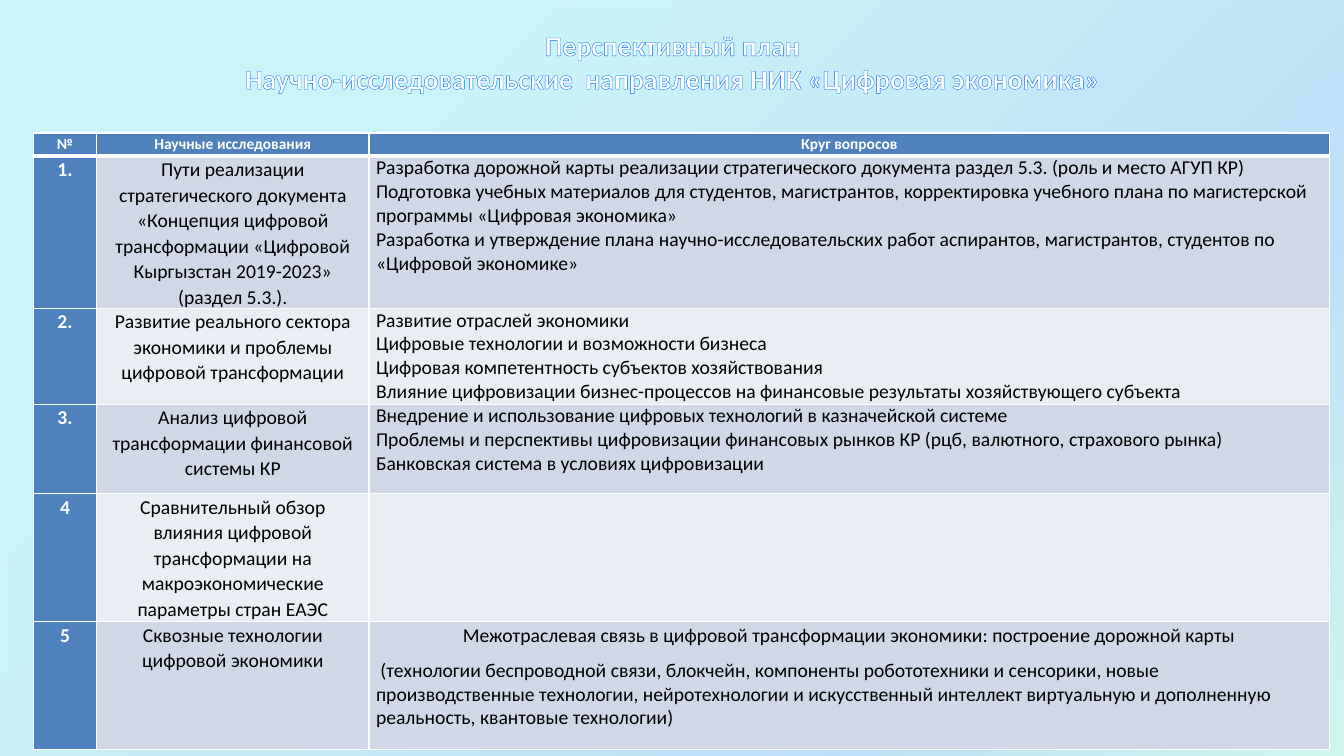
from lxml.etree import SubElement
from pptx import Presentation
from pptx.dml.color import RGBColor
from pptx.enum.shapes import MSO_SHAPE
from pptx.enum.text import MSO_ANCHOR, PP_ALIGN
from pptx.oxml import parse_xml
from pptx.oxml.ns import nsdecls, qn
from pptx.util import Inches, Pt

FONT = "Calibri"
WHITE, BLACK, HEADER_BLUE, OUTLINE_BLUE = "FFFFFF", "000000", "4F81BD", "0066FF"
BANDS = ("D0D8E8", "E9EDF4")
# Position %, colour, opacity %
BACKGROUND_STOPS = [(25, "21D6E0", 23), (75, "0087E6", 25), (100, "03D4A8", 18), (100, "005CBF", 26)]

TITLE = "Перспективный план\vНаучно-исследовательские  направления НИК «Цифровая экономика»"
HEADERS = ["№", "Научные исследования", "Круг вопросов"]
COLUMN_WIDTHS = [0.63, 2.7, 9.53]
ROW_HEIGHTS = [0.23, 1.51, 0.95, 0.89, 1.27, 1.27]
# Number, research topic, centred lead line, questions
RESEARCH = [
    ("1.", "Пути реализации стратегического документа «Концепция цифровой трансформации "
           "«Цифровой Кыргызстан 2019-2023» (раздел 5.3.).", None,
     ["Разработка дорожной карты реализации стратегического документа раздел 5.3. (роль и место АГУП КР)",
      "Подготовка учебных материалов для студентов, магистрантов, корректировка учебного плана "
      "по магистерской программы «Цифровая экономика»",
      "Разработка и утверждение плана научно-исследовательских работ аспирантов, магистрантов, "
      "студентов по «Цифровой экономике»"]),
    ("2.", "Развитие реального сектора экономики и проблемы цифровой трансформации", None,
     ["Развитие отраслей экономики",
      "Цифровые технологии и возможности бизнеса",
      "Цифровая компетентность субъектов хозяйствования",
      "Влияние цифровизации бизнес-процессов на финансовые результаты хозяйствующего субъекта"]),
    ("3.", "Анализ цифровой трансформации финансовой системы КР", None,
     ["Внедрение и использование цифровых технологий в казначейской системе",
      "Проблемы и перспективы цифровизации финансовых рынков КР (рцб, валютного, страхового рынка)",
      "Банковская система в условиях цифровизации"]),
    ("4", "Сравнительный обзор влияния цифровой трансформации на макроэкономические параметры "
          "стран ЕАЭС", None, []),
    ("5", "Сквозные технологии цифровой экономики",
     "Межотраслевая связь в цифровой трансформации экономики: построение дорожной карты",
     [" (технологии беспроводной связи, блокчейн, компоненты робототехники и сенсорики, новые "
      "производственные технологии, нейротехнологии и искусственный интеллект виртуальную и "
      "дополненную реальность, квантовые технологии)"]),
]


def color(value):
    return RGBColor.from_string(value)


def line_xml(tag, value, width):
    return parse_xml(f'<a:{tag} {nsdecls("a")} w="{Pt(width)}"><a:solidFill>'
                     f'<a:srgbClr val="{value}"/></a:solidFill></a:{tag}>')


def format_runs(paragraph, size, value, bold):
    for run in paragraph.runs:
        run.font.name = FONT
        run.font.size = Pt(size)
        run.font.bold = bold
        run.font.color.rgb = color(value)


def add_background(slide, left, top, width, height):
    shape = slide.shapes.add_shape(MSO_SHAPE.RECTANGLE, Inches(left), Inches(top),
                                   Inches(width), Inches(height))
    shape.shadow.inherit = False
    shape.line.fill.background()
    shape.fill.gradient()
    gradient = shape._element.spPr.find(qn("a:gradFill"))
    stops = gradient.find(qn("a:gsLst"))
    for stop in list(stops):
        stops.remove(stop)
    for position, value, opacity in BACKGROUND_STOPS:
        stop = SubElement(stops, qn("a:gs"), pos=str(position * 1000))
        stop_color = SubElement(stop, qn("a:srgbClr"), val=value)
        SubElement(stop_color, qn("a:alpha"), val=str(opacity * 1000))
    direction = gradient.find(qn("a:lin"))
    direction.set("ang", str(45 * 60000))
    direction.set("scaled", "0")


def add_title(slide, left, top, width, height):
    box = slide.shapes.add_textbox(Inches(left), Inches(top), Inches(width), Inches(height))
    frame = box.text_frame
    frame.word_wrap = True
    frame.vertical_anchor = MSO_ANCHOR.TOP
    frame.margin_top = frame.margin_bottom = 0
    frame.text = TITLE
    paragraph = frame.paragraphs[0]
    paragraph.alignment = PP_ALIGN.CENTER
    format_runs(paragraph, 19.8, WHITE, True)
    for run in paragraph.runs:
        run._r.get_or_add_rPr().insert(0, line_xml("ln", OUTLINE_BLUE, 1.45))


def style_cell(cell, fill, top_width, bottom_width):
    cell.margin_left = cell.margin_right = Inches(0.07)
    cell.margin_top = cell.margin_bottom = 0
    cell.fill.solid()
    cell.fill.fore_color.rgb = color(fill)
    borders = [("lnL", 1), ("lnR", 1), ("lnT", top_width), ("lnB", bottom_width)]
    for index, (tag, width) in enumerate(borders):
        cell._tc.get_or_add_tcPr().insert(index, line_xml(tag, WHITE, width))


def center_paragraph(paragraph):
    paragraph.alignment = PP_ALIGN.CENTER
    paragraph.line_spacing = 1.07
    paragraph.space_after = Pt(8)


def fill_label(cell, text, size, value, bold):
    cell.text_frame.text = text
    paragraph = cell.text_frame.paragraphs[0]
    center_paragraph(paragraph)
    format_runs(paragraph, size, value, bold)


def fill_questions(cell, lead, questions):
    lines = [lead] + questions if lead else questions
    cell.text_frame.text = "\n".join(lines)
    for paragraph in cell.text_frame.paragraphs:
        format_runs(paragraph, 14, BLACK, False)
    if lead:
        center_paragraph(cell.text_frame.paragraphs[0])


def add_research_table(slide, left, top):
    table = slide.shapes.add_table(
        len(ROW_HEIGHTS), len(COLUMN_WIDTHS), Inches(left), Inches(top),
        Inches(sum(COLUMN_WIDTHS)), Inches(sum(ROW_HEIGHTS))).table
    table.horz_banding = False
    for column, width in zip(table.columns, COLUMN_WIDTHS):
        column.width = Inches(width)
    for row, height in zip(table.rows, ROW_HEIGHTS):
        row.height = Inches(height)

    for cell, header in zip(table.rows[0].cells, HEADERS):
        style_cell(cell, HEADER_BLUE, 1, 3)
        fill_label(cell, header, 11, WHITE, True)
    for index, (number, topic, lead, questions) in enumerate(RESEARCH):
        cells = list(table.rows[index + 1].cells)
        band = BANDS[index % 2]
        for cell, fill in zip(cells, (HEADER_BLUE, band, band)):
            style_cell(cell, fill, 3 if index == 0 else 1, 1)
        fill_label(cells[0], number, 14, WHITE, True)
        fill_label(cells[1], topic, 14, BLACK, False)
        fill_questions(cells[2], lead, questions)


def main():
    presentation = Presentation()
    presentation.slide_width = Inches(13.33)
    presentation.slide_height = Inches(7.5)
    slide = presentation.slides.add_slide(presentation.slide_layouts[6])
    add_background(slide, 0, 0, 13.33, 7.67)
    add_title(slide, 0.67, 0.28, 12, 0.8)
    add_research_table(slide, 0.33, 1.32)
    presentation.save("out.pptx")


if __name__ == "__main__":
    main()
